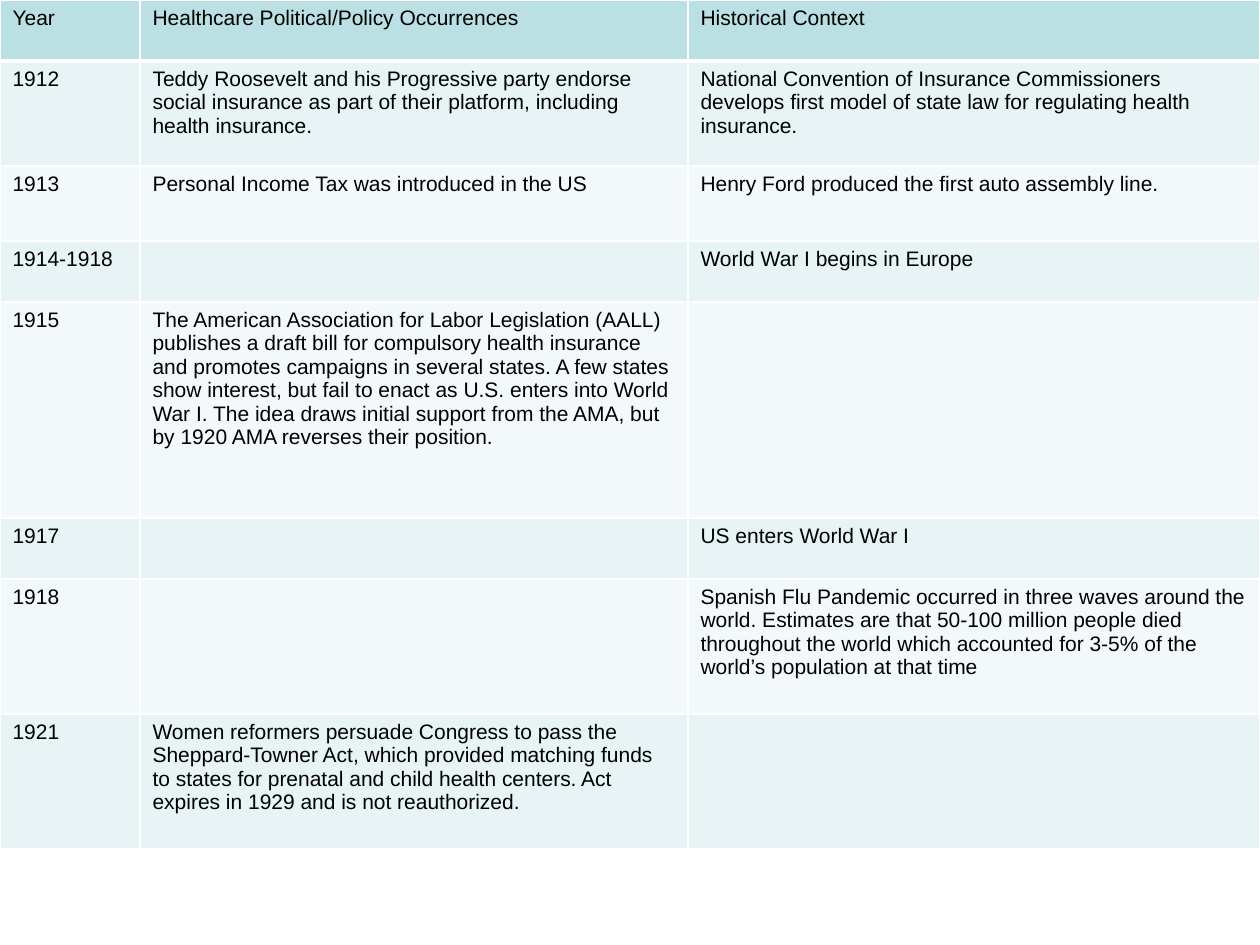
from lxml.etree import SubElement
from pptx import Presentation
from pptx.dml.color import RGBColor
from pptx.oxml.ns import qn
from pptx.util import Emu, Pt

PX_PER_INCH = 126
COLORS = {
    "text": "000000",
    "border": "FFFFFF",
    "header": "BBE0E3",
    "band_dark": "E7F3F4",
    "band_light": "F3F9FA",
}

# Timeline content
HEADINGS = ("Year", "Healthcare Political/Policy Occurrences", "Historical Context")
EVENTS = [
    ("1912",
     "Teddy Roosevelt and his Progressive party endorse social insurance as part "
     "of their platform, including health insurance.",
     "National Convention of Insurance Commissioners develops first model of state "
     "law for regulating health insurance."),
    ("1913",
     "Personal Income Tax was introduced in the US",
     "Henry Ford produced the first auto assembly line."),
    ("1914-1918", "", "World War I begins in Europe"),
    ("1915",
     "The American Association for Labor Legislation (AALL) publishes a draft bill "
     "for compulsory health insurance and promotes campaigns in several states. A few "
     "states show interest, but fail to enact as U.S. enters into World War I. The idea "
     "draws initial support from the AMA, but by 1920 AMA reverses their position.",
     ""),
    ("1917", "", "US enters World War I"),
    ("1918",
     "",
     "Spanish Flu Pandemic occurred in three waves around the world. Estimates are "
     "that 50-100 million people died throughout the world which accounted for 3-5% of "
     "the world’s population at that time"),
    ("1921",
     "Women reformers persuade Congress to pass the Sheppard-Towner Act, which provided "
     "matching funds to states for prenatal and child health centers. Act expires in "
     "1929 and is not reauthorized.",
     ""),
]
COLUMN_WIDTHS = (140, 548, 572)
ROW_HEIGHTS = (61, 105, 75, 61, 216, 61, 135, 135)


def px(length):
    return Emu(round(length * 914400 / PX_PER_INCH))


def write_text(frame, text, font="Arial", size=12, color="text"):
    run = frame.paragraphs[0].add_run()
    run.text = text
    run.font.name = font
    run.font.size = Pt(size)
    run.font.color.rgb = RGBColor.from_string(COLORS[color])


class SlideBuilder:
    """Holds the table style and the current slide."""

    def __init__(self, slide, border="border", thin=1, thick=3):
        self.slide = slide
        self.border = border
        self.thin = thin
        self.thick = thick

    def borders(self, cell, top, bottom):
        properties = cell._tc.get_or_add_tcPr()
        widths = {"lnL": self.thin, "lnR": self.thin, "lnT": top, "lnB": bottom}
        for side, width in widths.items():
            line = SubElement(properties, qn(f"a:{side}"), w=str(Pt(width)))
            fill = SubElement(line, qn("a:solidFill"))
            SubElement(fill, qn("a:srgbClr"), val=COLORS[self.border])

    def cell(self, cell, text, fill, top, bottom):
        self.borders(cell, top, bottom)
        cell.fill.solid()
        cell.fill.fore_color.rgb = RGBColor.from_string(COLORS[fill])
        if text:
            write_text(cell.text_frame, text)

    def table(self, left, top, widths, heights, rows):
        timeline = self.slide.shapes.add_table(
            len(heights), len(widths), px(left), px(top),
            px(sum(widths)), px(sum(heights))).table
        timeline.first_row = False
        timeline.horz_banding = False
        for column, width in zip(timeline.columns, widths):
            column.width = px(width)
        for index, (row, height, texts) in enumerate(zip(timeline.rows, heights, rows)):
            row.height = px(height)
            band = "band_dark" if index % 2 else "band_light"
            fill = band if index else "header"
            # The rule between header and body is heavier
            above = self.thick if index == 1 else self.thin
            below = self.thick if index == 0 else self.thin
            for cell, text in zip(row.cells, texts):
                self.cell(cell, text, fill, above, below)


def main():
    deck = Presentation()
    deck.slide_width, deck.slide_height = px(1260), px(945)
    builder = SlideBuilder(deck.slides.add_slide(deck.slide_layouts[6]))

    # Health policy timeline
    builder.table(0, 0, COLUMN_WIDTHS, ROW_HEIGHTS, [HEADINGS, *EVENTS])

    deck.save("out.pptx")


if __name__ == "__main__":
    main()
